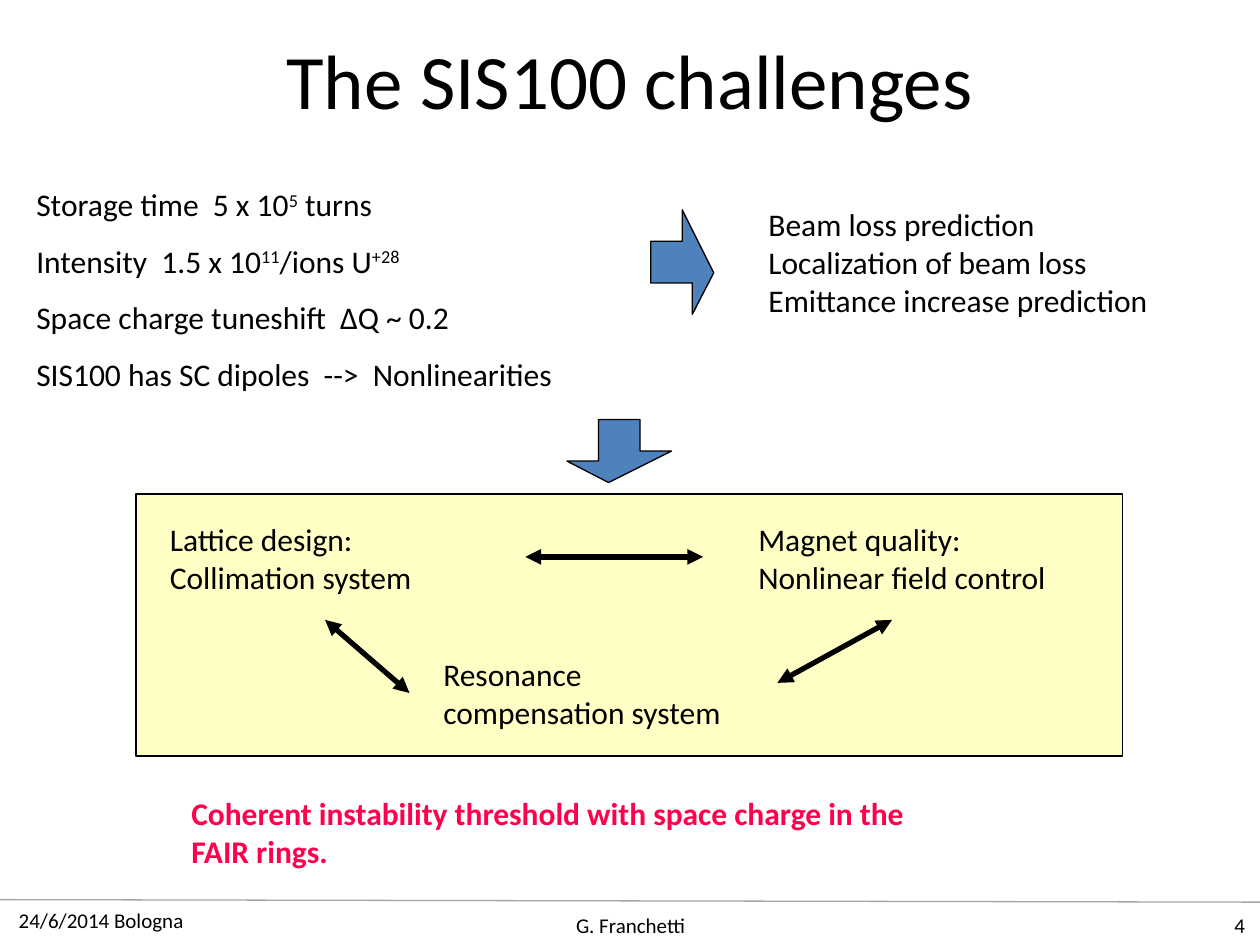
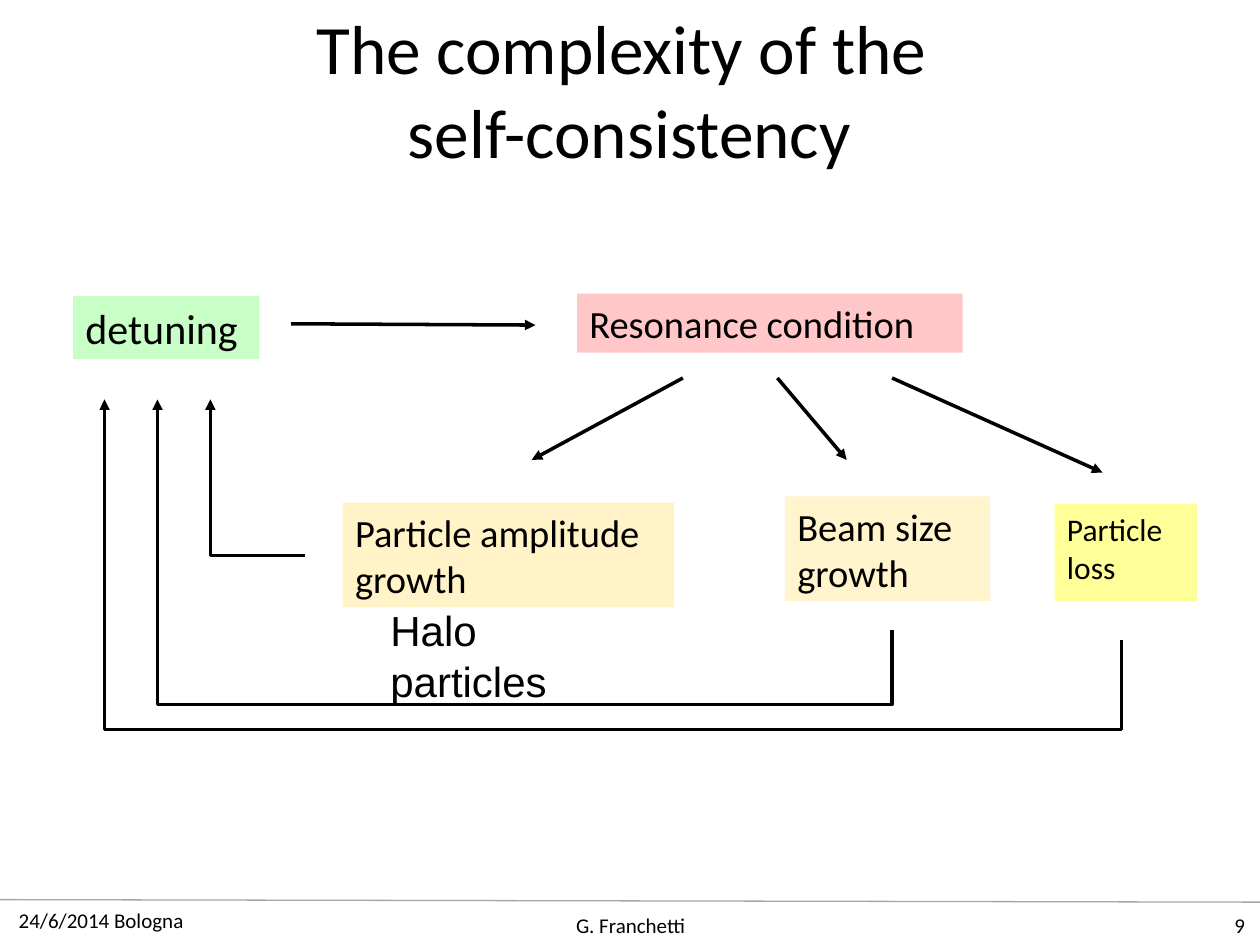
from lxml import etree
from pptx import Presentation
from pptx.dml.color import RGBColor
from pptx.enum.shapes import MSO_CONNECTOR, MSO_SHAPE
from pptx.enum.text import MSO_ANCHOR, PP_ALIGN
from pptx.oxml.ns import qn
from pptx.util import Pt

STRAIGHT = MSO_CONNECTOR.STRAIGHT
RECTANGLE = MSO_SHAPE.RECTANGLE
TOP, MIDDLE = MSO_ANCHOR.TOP, MSO_ANCHOR.MIDDLE
LEFT, CENTER, RIGHT = PP_ALIGN.LEFT, PP_ALIGN.CENTER, PP_ALIGN.RIGHT

EMU_PER_PX = 9144
TITLE_ONLY = 5
COLORS = {
    "ink": "000000",
    "rule": "A6A6A6",
    "arrow": "4F81BD",
    "alert": "FF004C",
    "yellow": "FFFF99",
    "green": "00FF00",
    "red": "FF0000",
    "amber": "FFCC00",
}
BLOCK_ARROW = [(25, 0), (58, 0), (58, 25), (83, 25), (33, 50), (0, 33), (25, 33)]


def px(*lengths):
    """Turn px lengths into EMU."""
    return [length * EMU_PER_PX for length in lengths]


def rgb(name):
    """Look up a colour by name."""
    return RGBColor.from_string(COLORS[name])


class SlideBuilder:
    """Hold the shared style and the current slide."""

    def __init__(self, deck, font="Calibri"):
        """Start with a deck and its main font."""
        self.deck = deck
        self.font = font
        self.page = None

    def start(self, number, title, frame, size):
        """Add a page with its title and footer."""
        self.page = self.deck.slides.add_slide(self.deck.slide_layouts[TITLE_ONLY])
        box = self.page.shapes.title
        box.left, box.top, box.width, box.height = px(*frame)
        self.fill_text(box, [title], size, align=CENTER, anchor=MIDDLE)
        self.line((0, 714), (1000, 716), 0.75, color="rule")
        self.text((5, 710, 255, 40), ["24/6/2014 Bologna"], 12, anchor=MIDDLE)
        self.text((342, 714, 317, 40), ["G. Franchetti"], 12, align=CENTER, anchor=MIDDLE)
        self.text((765, 714, 233, 40), [number], 12, align=RIGHT, anchor=MIDDLE)

    def fill_text(self, box, lines, size, color="ink", bold=None, font=None,
                  align=LEFT, anchor=TOP):
        """Fill a box; a tuple line alternates plain and raised spans."""
        frame = box.text_frame
        frame.word_wrap = True
        frame.vertical_anchor = anchor
        for index, line in enumerate(lines):
            para = frame.paragraphs[0] if index == 0 else frame.add_paragraph()
            para.alignment = align
            spans = line if isinstance(line, tuple) else (line,)
            for position, words in enumerate(spans):
                for part, piece in enumerate(words.split("\n")):
                    if part:
                        para.add_line_break()
                    span = para.add_run()
                    span.text = piece
                    span.font.name = font or self.font
                    span.font.size = Pt(size)
                    span.font.bold = bold
                    span.font.color.rgb = rgb(color)
                    if position % 2:
                        span.font._element.set("baseline", "30000")

    def text(self, frame, lines, size=18, **style):
        """Add a text box."""
        self.fill_text(self.page.shapes.add_textbox(*px(*frame)), lines, size, **style)

    def panel(self, frame, fill, opacity=100, lines=(), size=18, border=None):
        """Add a tinted rectangle, with text if given."""
        box = self.page.shapes.add_shape(RECTANGLE, *px(*frame))
        self.paint(box, fill, border)
        if opacity < 100:
            tint = box._element.spPr.find(qn("a:solidFill"))[0]
            etree.SubElement(tint, qn("a:alpha"), val=str(opacity * 1000))
        self.fill_text(box, lines, size)

    def paint(self, shape, fill, border, width=0.75):
        """Set fill and line; None leaves either one empty."""
        shape.shadow.inherit = False
        for paint, color in ((shape.fill, fill), (shape.line.fill, border)):
            if color:
                paint.solid()
                paint.fore_color.rgb = rgb(color)
            else:
                paint.background()
        if border:
            shape.line.width = Pt(width)

    def arrowheads(self, shape, ends):
        """Put triangles on the named ends of a line."""
        for end in ends:
            outline = shape._element.spPr.find(qn("a:ln"))
            etree.SubElement(outline, qn(f"a:{end}End"), type="triangle")

    def line(self, start, end, width=2, ends=(), color="ink"):
        """Add a straight line or arrow."""
        connector = self.page.shapes.add_connector(STRAIGHT, *px(*start, *end))
        connector.line.color.rgb = rgb(color)
        connector.line.width = Pt(width)
        self.arrowheads(connector, ends)
        etree.SubElement(connector._element.spPr, qn("a:effectLst"))

    def outline(self, points, close):
        """Build a freeform through the points."""
        builder = self.page.shapes.build_freeform(*points[0], scale=EMU_PER_PX)
        builder.add_line_segments(points[1:], close=close)
        return builder.convert_to_shape()

    def block_arrow(self, left, top, rotation=0):
        """Add a wide arrow that points down before it is turned."""
        shape = self.outline([(left + x, top + y) for x, y in BLOCK_ARROW], True)
        shape.rotation = rotation
        self.paint(shape, "arrow", "ink")

    def feedback(self, points, width=2):
        """Add an angled path that ends in an arrowhead."""
        shape = self.outline(points, False)
        self.paint(shape, None, "ink", width)
        self.arrowheads(shape, ["tail"])


def challenges(builder):
    """Build the slide on the SIS100 challenges."""
    builder.start("4", "The SIS100 challenges", (50, 0, 900, 125), 44)
    builder.panel((108, 392, 783, 208), "yellow", 56, border="ink")
    facts = [
        ("Storage time  5 x 10", "5", " turns"),
        ("Intensity  1.5 x 10", "11", "/ions U", "+28"),
        "Space charge tuneshift  ΔQ ~ 0.2",
        "SIS100 has SC dipoles  -->  Nonlinearities",
    ]
    for row, fact in enumerate(facts):
        builder.text((19, 142 + 45 * row, 540, 43), [fact])
    builder.block_arrow(500, 183, 270)
    builder.block_arrow(450, 333)
    builder.text((600, 158, 385, 110), ["Beam loss prediction", "Localization of beam loss",
                                        "Emittance increase prediction"])
    builder.text((125, 408, 253, 77), ["Lattice design:", "Collimation system"])
    builder.text((592, 408, 289, 77), ["Magnet quality:", "Nonlinear field control"])
    builder.text((342, 515, 289, 77), ["Resonance", "compensation system"])
    for start, end in [((708, 492), (617, 542)), ((325, 550), (258, 492)),
                       ((417, 442), (558, 442))]:
        builder.line(start, end, 3, ["head", "tail"])
    builder.text((142, 625, 594, 71), ["Coherent instability threshold with space charge in the",
                                       "FAIR rings."], color="alert", bold=True)


def self_consistency(builder):
    """Build the slide on the feedback loops."""
    builder.start("9", "The complexity of the \nself-consistency", (33, 8, 933, 125), 39.6)
    builder.panel((58, 235, 148, 50), "green", 22, ["detuning"], 24)
    builder.panel((458, 233, 306, 47), "red", 22, ["Resonance condition"], 22)
    builder.panel((272, 399, 263, 83), "amber", 22, ["Particle amplitude", "growth"], 22)
    builder.panel((623, 394, 163, 83), "amber", 20, ["Beam size", "growth"], 22)
    builder.panel((837, 400, 113, 77), "yellow", lines=["Particle", "loss"])
    for start, end in [((231, 257), (425, 258)), ((542, 300), (422, 365)),
                       ((617, 300), (672, 365)), ((708, 300), (875, 375))]:
        builder.line(start, end, ends=["tail"])
    builder.feedback([(242, 441), (167, 441), (167, 317)], 1.75)
    for source, top, floor, target in [(708, 500, 559, 125), (890, 508, 579, 83)]:
        builder.feedback([(source, top), (source, floor), (target, floor), (target, 317)])
    builder.text((300, 475, 194, 50), ["Halo particles"], 24, font="Arial")


def main():
    """Build and save the deck."""
    deck = Presentation()
    deck.slide_width, deck.slide_height = px(1000, 750)
    builder = SlideBuilder(deck)
    challenges(builder)
    self_consistency(builder)
    deck.save("out.pptx")


if __name__ == "__main__":
    main()
